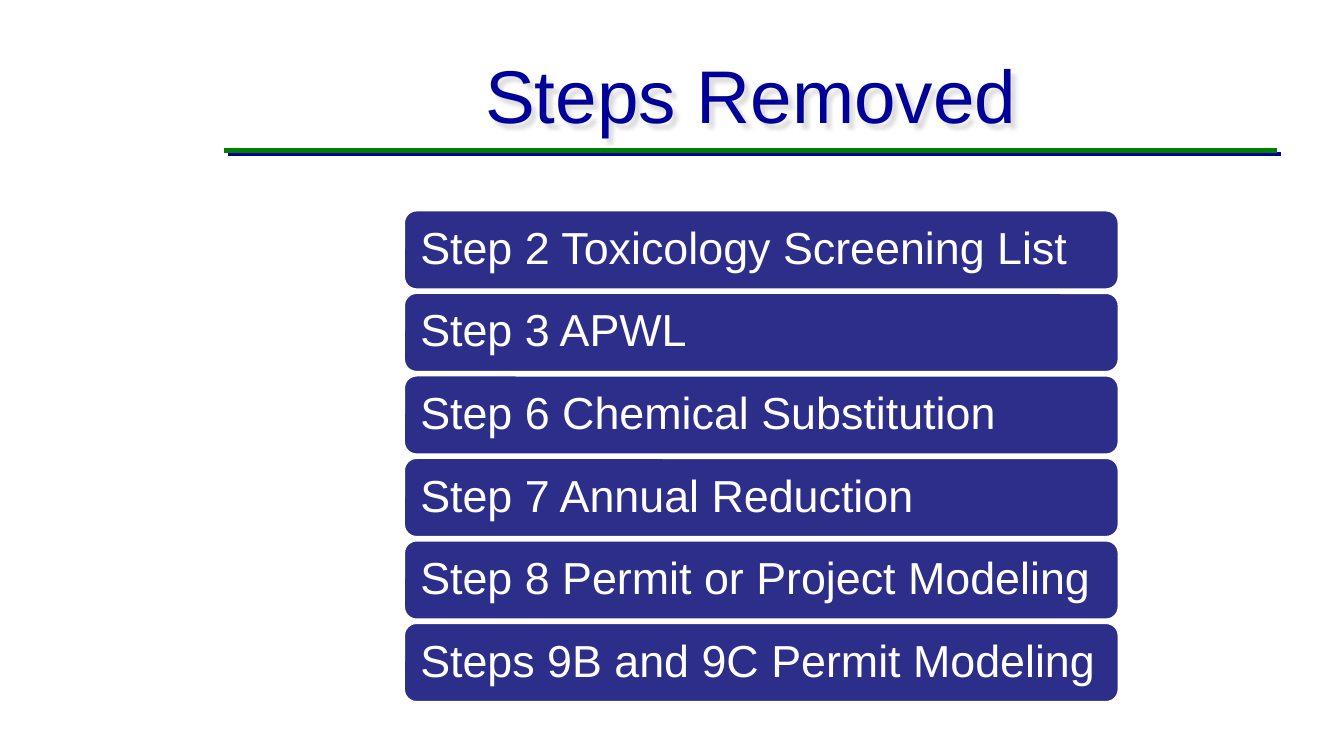
"""Build the slide that lists the removed steps."""
from dataclasses import dataclass

from lxml import etree
from pptx import Presentation
from pptx.dml.color import RGBColor
from pptx.enum.shapes import MSO_CONNECTOR, MSO_SHAPE
from pptx.enum.text import MSO_ANCHOR, PP_ALIGN
from pptx.oxml import parse_xml
from pptx.oxml.ns import nsdecls
from pptx.util import Inches, Pt

STRAIGHT = MSO_CONNECTOR.STRAIGHT
ROUNDED = MSO_SHAPE.ROUNDED_RECTANGLE
MIDDLE = MSO_ANCHOR.MIDDLE
LEFT, CENTER = PP_ALIGN.LEFT, PP_ALIGN.CENTER

NAVY = RGBColor(0x00, 0x00, 0x99)
GREEN = RGBColor(0x00, 0x80, 0x00)
INDIGO = RGBColor(0x2D, 0x2D, 0x8A)
GRAY = RGBColor(0xDD, 0xDD, 0xDD)
WHITE = RGBColor(0xFF, 0xFF, 0xFF)

FONT = "Arial"
PAGE_WIDTH = 10
PAGE_HEIGHT = PAGE_WIDTH * 9 / 16
BAR_LEFT, BAR_TOP, BAR_WIDTH, BAR_HEIGHT = 3, 1.56, 5.33, 0.6
LAST_BAR_TOP = 4.63
BAR_RADIUS = 0.1
RULE_LEFT, RULE_RIGHT, RULE_TOP = 1.67, 9.5, 1.12


@dataclass(frozen=True)
class Step:
    text: str
    top: float


LABELS = (
    "Step 2 Toxicology Screening List",
    "Step 3 APWL",
    "Step 6 Chemical Substitution",
    "Step 7 Annual Reduction",
    "Step 8 Permit or Project Modeling",
    "Steps 9B and 9C Permit Modeling",
)
BAR_PITCH = (LAST_BAR_TOP - BAR_TOP) / (len(LABELS) - 1)
STEPS = [Step(label, BAR_TOP + row * BAR_PITCH) for row, label in enumerate(LABELS)]


def shadow_effect(color: RGBColor, distance: float, blur: float = 0) -> etree.ElementBase:
    return parse_xml(
        f'<a:effectLst {nsdecls("a")}>'
        f'<a:outerShdw blurRad="{Pt(blur)}" dist="{Pt(distance)}" dir="2700000" '
        f'algn="ctr" rotWithShape="0">'
        f'<a:srgbClr val="{color}"/></a:outerShdw></a:effectLst>'
    )


def write_text(box, text: str, *, size: float, color: RGBColor, align: PP_ALIGN,
               inset: float, line_spacing: float = 1.0, space_after: float = 0) -> None:
    frame = box.text_frame
    frame.word_wrap = True
    frame.vertical_anchor = MIDDLE
    frame.margin_left = frame.margin_right = Inches(inset)
    frame.margin_top = frame.margin_bottom = Inches(inset)
    para = frame.paragraphs[0]
    para.alignment = align
    para.line_spacing = line_spacing
    para.space_before = Pt(0)
    para.space_after = Pt(space_after)
    span = para.add_run()
    span.text = text
    span.font.name = FONT
    span.font.size = Pt(size)
    span.font.color.rgb = color


def add_title(page, text: str) -> None:
    title = page.shapes.title
    title.left, title.top = Inches(1.67), Inches(0.23)
    title.width, title.height = Inches(7.83), Inches(0.94)
    write_text(title, text, size=40, color=NAVY, align=CENTER, inset=0.05)
    title._element.spPr.append(shadow_effect(GRAY, 2.8, blur=1))


def add_rule(page) -> None:
    rule = page.shapes.add_connector(
        STRAIGHT, Inches(RULE_LEFT), Inches(RULE_TOP), Inches(RULE_RIGHT), Inches(RULE_TOP)
    )
    rule.line.color.rgb = GREEN
    rule.line.width = Pt(2.25)
    rule._element.spPr.append(shadow_effect(NAVY, 2.8))


def add_step(page, step: Step) -> None:
    bar = page.shapes.add_shape(
        ROUNDED, Inches(BAR_LEFT), Inches(step.top), Inches(BAR_WIDTH), Inches(BAR_HEIGHT)
    )
    bar.adjustments[0] = BAR_RADIUS / BAR_HEIGHT
    bar.shadow.inherit = False
    bar.fill.solid()
    bar.fill.fore_color.rgb = INDIGO
    bar.line.color.rgb = WHITE
    bar.line.width = Pt(2)
    write_text(bar, step.text, size=24, color=WHITE, align=LEFT, inset=0.1,
               line_spacing=0.9, space_after=8.4)


def main() -> None:
    deck = Presentation()
    deck.slide_width, deck.slide_height = Inches(PAGE_WIDTH), Inches(PAGE_HEIGHT)
    page = deck.slides.add_slide(deck.slide_layouts.get_by_name("Title Only"))
    add_rule(page)
    add_title(page, "Steps Removed")
    for step in STEPS:
        add_step(page, step)
    deck.save("out.pptx")


if __name__ == "__main__":
    main()
